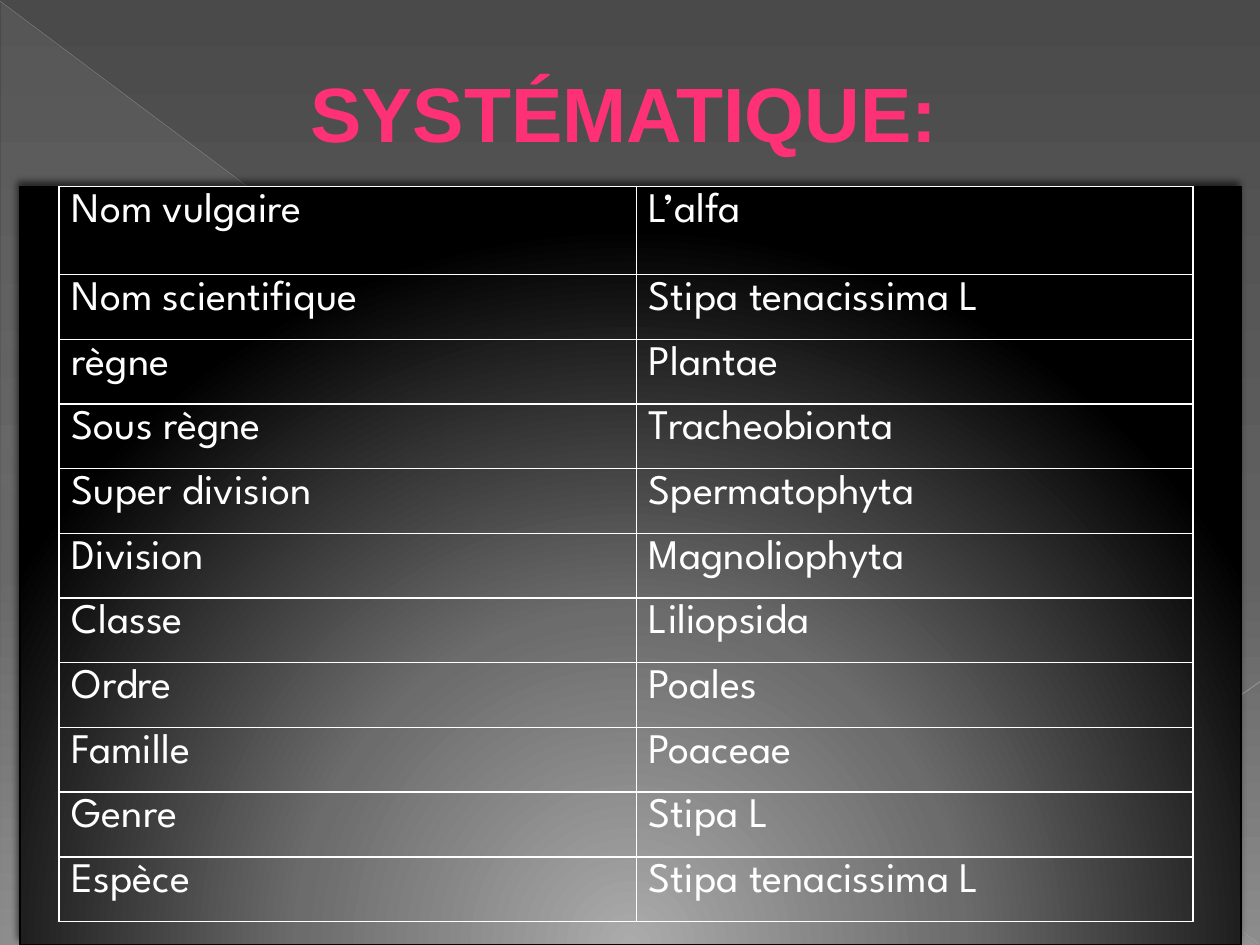
from dataclasses import dataclass
from lxml.etree import SubElement
from pptx import Presentation
from pptx.dml.color import RGBColor
from pptx.enum.shapes import MSO_CONNECTOR, MSO_SHAPE
from pptx.enum.text import PP_ALIGN
from pptx.oxml.ns import qn
from pptx.slide import Slide
from pptx.util import Inches, Pt

WIDTH, HEIGHT = Inches(10), Inches(7.5)

TAXONOMY = [
    ("Nom vulgaire", "L’alfa"),
    ("Nom scientifique", "Stipa tenacissima L"),
    ("règne", "Plantae"),
    ("Sous règne", "Tracheobionta"),
    ("Super division", "Spermatophyta"),
    ("Division", "Magnoliophyta"),
    ("Classe", "Liliopsida"),
    ("Ordre", "Poales"),
    ("Famille", "Poaceae"),
    ("Genre", "Stipa L"),
    ("Espèce", "Stipa tenacissima L"),
]


def color(value):
    return RGBColor.from_string(value)


def across(percent):
    return round(WIDTH * percent / 100)


def down(percent):
    return round(HEIGHT * percent / 100)


def box(left, top, width, height):
    return across(left), down(top), across(width), down(height)


def add(parent, tag, **attributes):
    return SubElement(parent, qn(tag), {key: str(value) for key, value in attributes.items()})


def add_color(parent, value, opacity=100):
    element = add(parent, "a:srgbClr", val=value)
    if opacity < 100:
        add(element, "a:alpha", val=opacity * 1000)


def set_gradient(fill, owner, stops, angle=None, center=None):
    fill.gradient()
    gradient = owner.find(".//" + qn("a:gradFill"))
    for child in list(gradient):
        gradient.remove(child)
    stop_list = add(gradient, "a:gsLst")
    for position, value, opacity in stops:
        add_color(add(stop_list, "a:gs", pos=position * 1000), value, opacity)
    if center:
        radial = add(gradient, "a:path", path="circle")
        sides = {side: share * 1000 for side, share in zip("ltrb", center)}
        add(radial, "a:fillToRect", **sides)
    else:
        add(gradient, "a:lin", ang=angle * 60000, scaled=0)


@dataclass
class Deck:
    slide: Slide
    title_font: str = "Arial"
    body_font: str = "League Spartan"
    title_color: str = "FE3177"
    body_color: str = "FFFFFF"

    def background(self, stops, angle):
        set_gradient(self.slide.background.fill, self.slide.element, stops, angle)

    def shape(self, kind, place, stops, outline=None, **direction):
        shape = self.slide.shapes.add_shape(kind, *box(*place))
        set_gradient(shape.fill, shape.element, stops, **direction)
        if outline:
            shape.line.color.rgb = color(outline)
            shape.line.width = Pt(0.75)
        else:
            shape.line.fill.background()
        shape.shadow.inherit = False
        return shape

    def shadow(self, shape, value, opacity, blur, distance, angle):
        effects = shape.element.spPr.find(qn("a:effectLst"))
        outer = add(effects, "a:outerShdw", blurRad=Pt(blur), dist=Pt(distance),
                    dir=angle * 60000, algn="ctr", rotWithShape=0)
        add_color(outer, value, opacity)

    def line(self, start, end, value, width, opacity):
        line = self.slide.shapes.add_connector(
            MSO_CONNECTOR.STRAIGHT, across(start[0]), down(start[1]), across(end[0]), down(end[1]))
        line.line.color.rgb = color(value)
        line.line.width = Pt(width)
        add(line.element.find(".//" + qn("a:srgbClr")), "a:alpha", val=opacity * 1000)
        add(line.element.spPr, "a:effectLst")

    def title(self, place, text):
        frame = self.slide.shapes.add_textbox(*box(*place)).text_frame
        frame.word_wrap = False
        paragraph = frame.paragraphs[0]
        paragraph.text = text
        paragraph.alignment = PP_ALIGN.CENTER
        self.font(paragraph, self.title_font, 44, self.title_color, True)

    def font(self, paragraph, name, size, value, bold=False):
        paragraph.font.name = name
        paragraph.font.size = Pt(size)
        paragraph.font.bold = bold
        paragraph.font.color.rgb = color(value)

    def table(self, left, top, widths, heights, rows):
        place = box(left, top, sum(widths), sum(heights))
        table = self.slide.shapes.add_table(len(rows), len(widths), *place).table
        table.first_row = table.horz_banding = False
        for column, width in zip(table.columns, widths):
            column.width = across(width)
        for row, height, texts in zip(table.rows, heights, rows):
            row.height = down(height)
            for cell, text in zip(row.cells, texts):
                self.cell(cell, text)

    def cell(self, cell, text):
        cell.text = text
        self.font(cell.text_frame.paragraphs[0], self.body_font, 24, self.body_color)
        properties = cell._tc.get_or_add_tcPr()
        for side in ("a:lnL", "a:lnR", "a:lnT", "a:lnB"):
            border = add(properties, side, w=Pt(1))
            add_color(add(border, "a:solidFill"), self.body_color)
        cell.fill.background()


def main():
    presentation = Presentation()
    presentation.slide_width, presentation.slide_height = WIDTH, HEIGHT
    deck = Deck(presentation.slides.add_slide(presentation.slide_layouts[6]))
    deck.background([(0, "4A4A4A", 100), (60, "626262", 100), (100, "8C8C8C", 100)], 90)
    deck.shape(MSO_SHAPE.RIGHT_TRIANGLE, (0.1, 0.27, 99.8, 99.73),
               [(0, "D2D2D2", 10), (70, "D2D2D2", 8), (100, "D2D2D2", 1)], angle=133)
    deck.line((0, 0.13), (99.9, 99.87), "BFBFBF", 0.39, 35)
    deck.line((100, 72.13), (70.7, 99.87), "C6C6C6", 0.47, 45)
    deck.title((23.4, 6.27, 52.3, 11.2), "SYSTÉMATIQUE:")
    panel = deck.shape(MSO_SHAPE.RECTANGLE, (1.6, 19.73, 96.9, 80.27),
                       [(0, "ABABAB", 100), (46, "6C6C6C", 100), (100, "000000", 100)],
                       outline="000000", center=(50, 155, 50, -55))
    deck.shadow(panel, "000000", 60, 4, 3, 245)
    heights = [9.33] + [6.85] * (len(TAXONOMY) - 1)
    deck.table(4.7, 19.73, [45.8, 44.2], heights, TAXONOMY)
    presentation.save("out.pptx")


if __name__ == "__main__":
    main()
